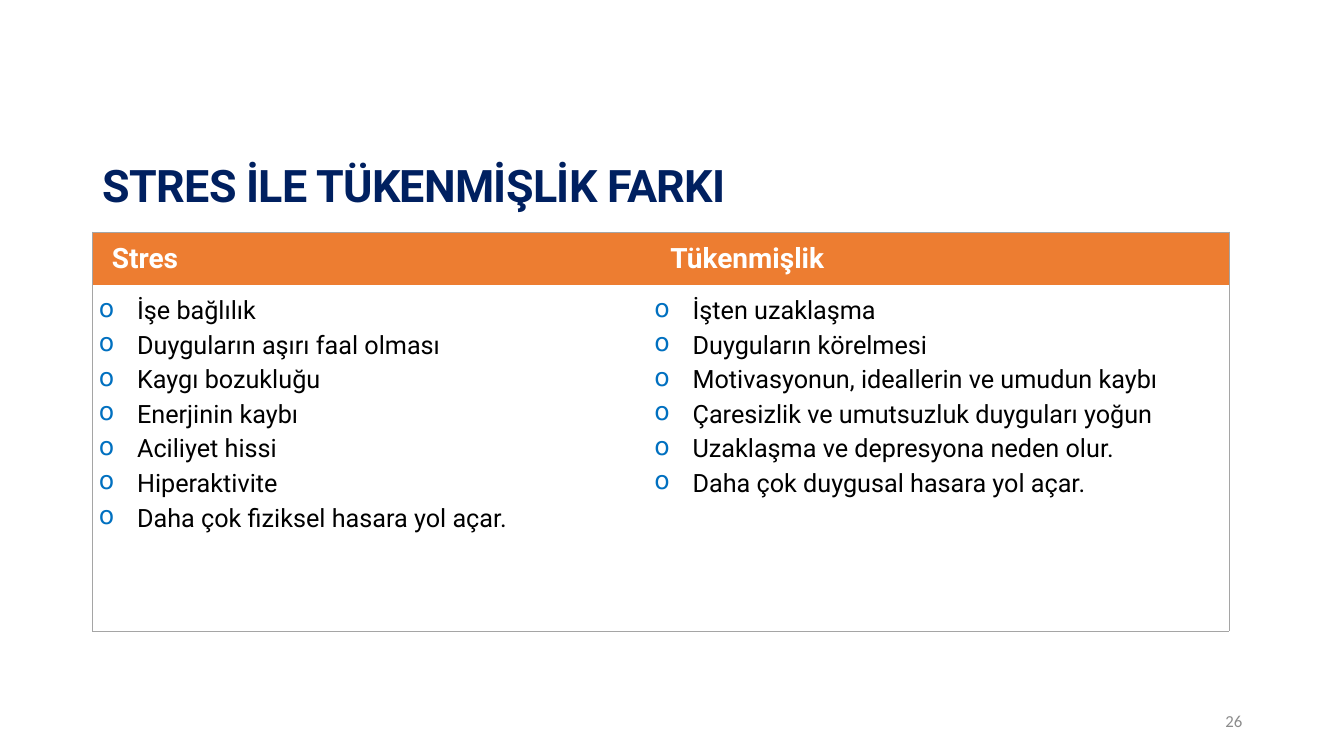
from lxml.etree import SubElement
from pptx import Presentation
from pptx.dml.color import RGBColor
from pptx.enum.text import MSO_ANCHOR, MSO_AUTO_SIZE, PP_ALIGN
from pptx.oxml.ns import qn
from pptx.util import Inches, Pt

NAVY = RGBColor(0x00, 0x20, 0x60)
ORANGE = RGBColor(0xED, 0x7D, 0x31)
BLUE = RGBColor(0x00, 0x70, 0xC0)
GREY = RGBColor(0xA5, 0xA5, 0xA5)
NUMBER_GREY = RGBColor(0x8C, 0x8C, 0x8C)
WHITE = RGBColor(0xFF, 0xFF, 0xFF)
BLACK = RGBColor(0x00, 0x00, 0x00)

COLUMNS = [
    ("Stres", 5.51, 0.13, PP_ALIGN.JUSTIFY, [
        "İşe bağlılık",
        "Duyguların aşırı faal olması",
        "Kaygı bozukluğu",
        "Enerjinin kaybı",
        "Aciliyet hissi",
        "Hiperaktivite",
        "Daha çok fiziksel hasara yol açar.",
    ]),
    ("Tükenmişlik", 5.76, 0.16, PP_ALIGN.LEFT, [
        "İşten uzaklaşma",
        "Duyguların körelmesi",
        "Motivasyonun, ideallerin ve umudun kaybı",
        "Çaresizlik ve umutsuzluk duyguları yoğun",
        "Uzaklaşma ve depresyona neden olur.",
        "Daha çok duygusal hasara yol açar.",
    ]),
]
ROW_HEIGHTS = [0.53, 3.43]


def add_run(paragraph, text, size, color, bold=False, font="Roboto"):
    run = paragraph.add_run()
    run.text = text
    run.font.name = font
    run.font.size = Pt(size)
    run.font.bold = bold
    run.font.color.rgb = color
    return run


def set_indent(paragraph, left, first=0):
    properties = paragraph._p.get_or_add_pPr()
    properties.set("marL", str(Inches(left)))
    properties.set("indent", str(Inches(first)))
    return properties


def add_bullet(paragraph):
    properties = set_indent(paragraph, 0.38, -0.38)
    bullet_color = SubElement(properties, qn("a:buClr"))
    SubElement(bullet_color, qn("a:srgbClr"), val=str(BLUE))
    SubElement(properties, qn("a:buChar"), char="o")


def set_borders(cell, visible_sides):
    properties = cell._tc.get_or_add_tcPr()
    for side in "LRTB":
        line = SubElement(properties, qn(f"a:ln{side}"), w=str(Pt(0.5)))
        if side in visible_sides:
            fill = SubElement(line, qn("a:solidFill"))
            SubElement(fill, qn("a:srgbClr"), val=str(GREY))
        else:
            SubElement(line, qn("a:noFill"))


def add_title(slide, left, top, width, height):
    title = slide.shapes.title
    title.left, title.top = Inches(left), Inches(top)
    title.width, title.height = Inches(width), Inches(height)
    frame = title.text_frame
    frame.auto_size = MSO_AUTO_SIZE.NONE
    frame.vertical_anchor = MSO_ANCHOR.MIDDLE
    paragraph = frame.paragraphs[0]
    paragraph.alignment = PP_ALIGN.LEFT
    paragraph.line_spacing = 0.9
    run = add_run(paragraph, "STRES İLE TÜKENMİŞLİK FARKI", 32, NAVY, bold=True)
    run.font._element.set("spc", "-50")


def fill_header(cell, heading, indent):
    cell.fill.solid()
    cell.fill.fore_color.rgb = ORANGE
    paragraph = cell.text_frame.paragraphs[0]
    set_indent(paragraph, indent)
    paragraph.alignment = PP_ALIGN.JUSTIFY
    paragraph.line_spacing = 1.15
    paragraph.space_after = Pt(8)
    add_run(paragraph, heading, 20, WHITE, bold=True)


def fill_list(cell, items, alignment):
    cell.fill.background()
    frame = cell.text_frame
    for index, item in enumerate(items):
        paragraph = frame.add_paragraph() if index else frame.paragraphs[0]
        add_bullet(paragraph)
        paragraph.alignment = alignment
        paragraph.line_spacing = 1.17
        add_run(paragraph, item, 18, BLACK)


def add_comparison(slide, left, top, width, height):
    table = slide.shapes.add_table(
        len(ROW_HEIGHTS), len(COLUMNS),
        Inches(left), Inches(top), Inches(width), Inches(height)).table
    table.first_row = False
    table.horz_banding = False
    for row, row_height in zip(table.rows, ROW_HEIGHTS):
        row.height = Inches(row_height)

    for index, (heading, column_width, indent, alignment, items) in enumerate(COLUMNS):
        table.columns[index].width = Inches(column_width)
        header, body = table.cell(0, index), table.cell(1, index)
        outer_side = "LR"[index]
        for cell, edge in ((header, "T"), (body, "B")):
            cell.margin_left = cell.margin_right = Inches(0.06)
            cell.margin_top = cell.margin_bottom = Inches(0.06)
            set_borders(cell, outer_side + edge)
        fill_header(header, heading, indent)
        fill_list(body, items, alignment)


def add_slide_number(slide, left, top, width, height):
    box = slide.shapes.add_textbox(
        Inches(left), Inches(top), Inches(width), Inches(height))
    frame = box.text_frame
    frame.word_wrap = True
    frame.vertical_anchor = MSO_ANCHOR.MIDDLE
    paragraph = frame.paragraphs[0]
    paragraph.alignment = PP_ALIGN.RIGHT
    add_run(paragraph, "26", 12, NUMBER_GREY, font="Calibri")


def main():
    presentation = Presentation()
    presentation.slide_width = Inches(13.33)
    presentation.slide_height = Inches(7.5)
    slide = presentation.slides.add_slide(presentation.slide_layouts[5])
    # Title, ending where the table begins
    add_title(slide, 0.92, 1.43, 11.5, 0.87)
    # Two-column comparison
    add_comparison(slide, 0.92, 2.3, 11.27, 3.96)
    # Slide number
    add_slide_number(slide, 9.42, 6.95, 3, 0.4)
    presentation.save("out.pptx")


if __name__ == "__main__":
    main()
